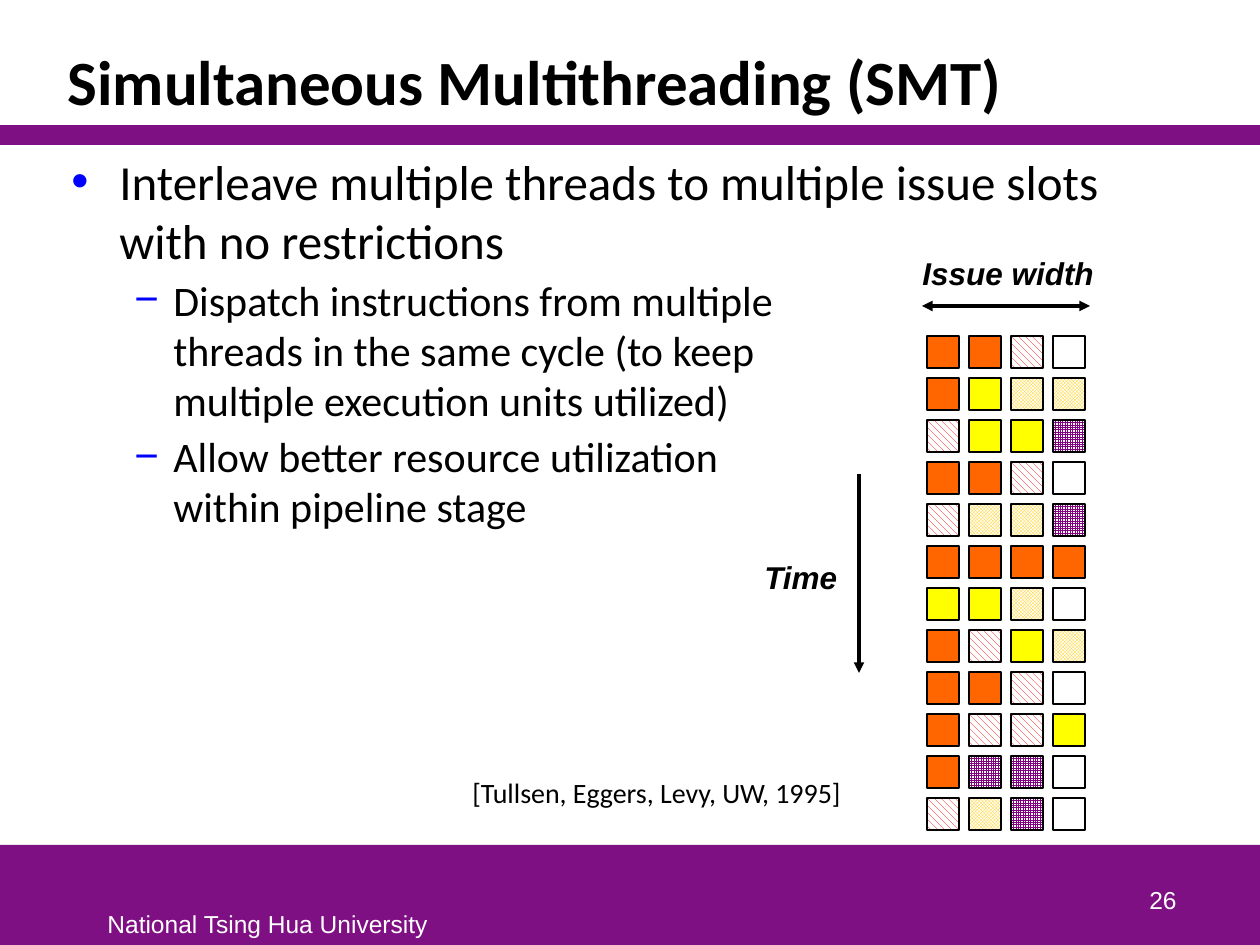
from pptx import Presentation
from pptx import util as u
from pptx.dml.color import RGBColor
from pptx.enum import dml, shapes, text
from pptx.oxml.ns import qn
from lxml import etree

PX = 914400 / 126  # EMU per px
BLACK = RGBColor(0x00, 0x00, 0x00)
WHITE = RGBColor(0xFF, 0xFF, 0xFF)
BAND = RGBColor(0x7F, 0x10, 0x84)
BULLET = RGBColor(0x00, 0x00, 0xFF)
ORANGE = RGBColor(0xFF, 0x66, 0x00)
YELLOW = RGBColor(0xFF, 0xFF, 0x00)
RED = RGBColor(0xFF, 0x00, 0x00)
GOLD = RGBColor(0xFF, 0xCC, 0x00)
PURPLE = RGBColor(0x80, 0x00, 0x80)


def box(*lengths):
    return [u.Emu(round(n * PX)) for n in lengths]


def add_run(p, words, size, font, color=BLACK, bold=False, italic=False):
    r = p.add_run()
    r.text = words
    r.font.size = u.Pt(size)
    r.font.name = font
    r.font.color.rgb = color
    r.font.bold = bold
    r.font.italic = italic


prs = Presentation()
prs.slide_width, prs.slide_height = box(1260, 945)
s = prs.slides.add_slide(prs.slide_layouts[5])

# Bands under the title and at the foot
for y, h in [(845, 100), (125, 20)]:
    sp = s.shapes.add_shape(shapes.MSO_SHAPE.RECTANGLE, *box(0, y, 1260, h))
    sp.shadow.inherit = False
    sp.fill.solid()
    sp.fill.fore_color.rgb = BAND
    sp.line.fill.background()

# Title
title = s.shapes.title
title.left, title.top, title.width, title.height = box(55, 32, 1130, 93)
tf = title.text_frame
tf.auto_size = text.MSO_AUTO_SIZE.NONE
tf.vertical_anchor = text.MSO_ANCHOR.BOTTOM
p = tf.paragraphs[0]
p.alignment = text.PP_ALIGN.LEFT
p.line_spacing = 0.85
add_run(p, "Simultaneous Multithreading (SMT)", 36, "Calibri", bold=True)

# Bullets: level, mark, left margin, hanging indent, size, lines
bullets = [
    (0, "•", 48, 48, 28,
     ["Interleave multiple threads to multiple issue slots with no restrictions"]),
    (1, "−", 102, 39, 24,
     ["Dispatch instructions from multiple ",
      "threads in the same cycle (to keep ",
      "multiple execution units utilized)"]),
    (1, "−", 102, 39, 24,
     ["Allow better resource utilization", "within pipeline stage"]),
]
tf = s.shapes.add_textbox(*box(59, 145, 1126, 684)).text_frame
tf.word_wrap = True
for i, (level, mark, margin, hang, size, lines) in enumerate(bullets):
    p = tf.add_paragraph() if i else tf.paragraphs[0]
    p.level = level
    if i:
        p.space_before = u.Pt(3)
    pPr = p._p.get_or_add_pPr()
    pPr.set("marL", str(round(margin * PX)))
    pPr.set("indent", str(-round(hang * PX)))
    color = etree.SubElement(pPr, qn("a:buClr"))
    etree.SubElement(color, qn("a:srgbClr"), val=str(BULLET))
    etree.SubElement(pPr, qn("a:buFont"), typeface="Arial")
    etree.SubElement(pPr, qn("a:buChar"), char=mark)
    for n, line in enumerate(lines):
        if n:
            p.add_line_break()
        add_run(p, line, size, "Calibri")

# Slide number
tf = s.shapes.add_textbox(*box(927, 858, 262, 63)).text_frame
tf.word_wrap = True
tf.vertical_anchor = text.MSO_ANCHOR.BOTTOM
p = tf.paragraphs[0]
p.alignment = text.PP_ALIGN.RIGHT
add_run(p, "26", 14, "Arial", WHITE)

# Footer, diagram labels and citation
labels = [
    ("National Tsing Hua University", (95, 903, 348, 42), 14, "Arial", WHITE, False),
    ("Issue width", (910, 248, 197, 50), 18, "Arial", BLACK, True),
    ("Time", (752, 552, 98, 50), 18, "Arial", BLACK, True),
    ("[Tullsen, Eggers, Levy, UW, 1995]", (460, 769, 398, 47), 16, "Calibri", BLACK, False),
]
for words, place, size, font, color, strong in labels:
    tf = s.shapes.add_textbox(*box(*place)).text_frame
    tf.word_wrap = False
    tf.auto_size = text.MSO_AUTO_SIZE.SHAPE_TO_FIT_TEXT
    add_run(tf.paragraphs[0], words, size, font, color, strong, strong)

# Issue width and time arrows
arrows = [
    ((922, 306, 1090, 306), ["a:headEnd", "a:tailEnd"]),
    ((859, 474, 859, 673), ["a:tailEnd"]),
]
for ends, heads in arrows:
    c = s.shapes.add_connector(shapes.MSO_CONNECTOR.STRAIGHT, *box(*ends))
    c.line.color.rgb = BLACK
    c.line.width = u.Pt(2)
    spPr = c._element.spPr
    for head in heads:
        etree.SubElement(spPr.find(qn("a:ln")), qn(head), type="triangle")
    etree.SubElement(spPr, qn("a:effectLst"))

# Issue slots: one row per cycle, one letter per slot, "." is an empty slot
solids = {"O": ORANGE, "Y": YELLOW}
patterns = {
    "R": (dml.MSO_PATTERN.WIDE_DOWNWARD_DIAGONAL, RED),
    "G": (dml.MSO_PATTERN.SMALL_CHECKER_BOARD, GOLD),
    "P": (dml.MSO_PATTERN.SMALL_GRID, PURPLE),
}
cycles = ["OOR.", "OYGG", "RYYP", "OOR.", "RGGP", "OOOO",
          "YYG.", "ORYG", "OOR.", "ORRY", "OPP.", "RGP."]
STEP, SLOT = 42, 32
for row, cycle in enumerate(cycles):
    for col, thread in enumerate(cycle):
        sp = s.shapes.add_shape(
            shapes.MSO_SHAPE.RECTANGLE,
            *box(927 + col * STEP, 336 + row * STEP, SLOT, SLOT))
        sp.shadow.inherit = False
        sp.line.color.rgb = BLACK
        sp.line.width = u.Pt(0.75)
        if thread in solids:
            sp.fill.solid()
            sp.fill.fore_color.rgb = solids[thread]
        elif thread in patterns:
            sp.fill.patterned()
            sp.fill.pattern, sp.fill.fore_color.rgb = patterns[thread]
            sp.fill.back_color.rgb = WHITE
        else:
            sp.fill.background()

prs.save("out.pptx")
